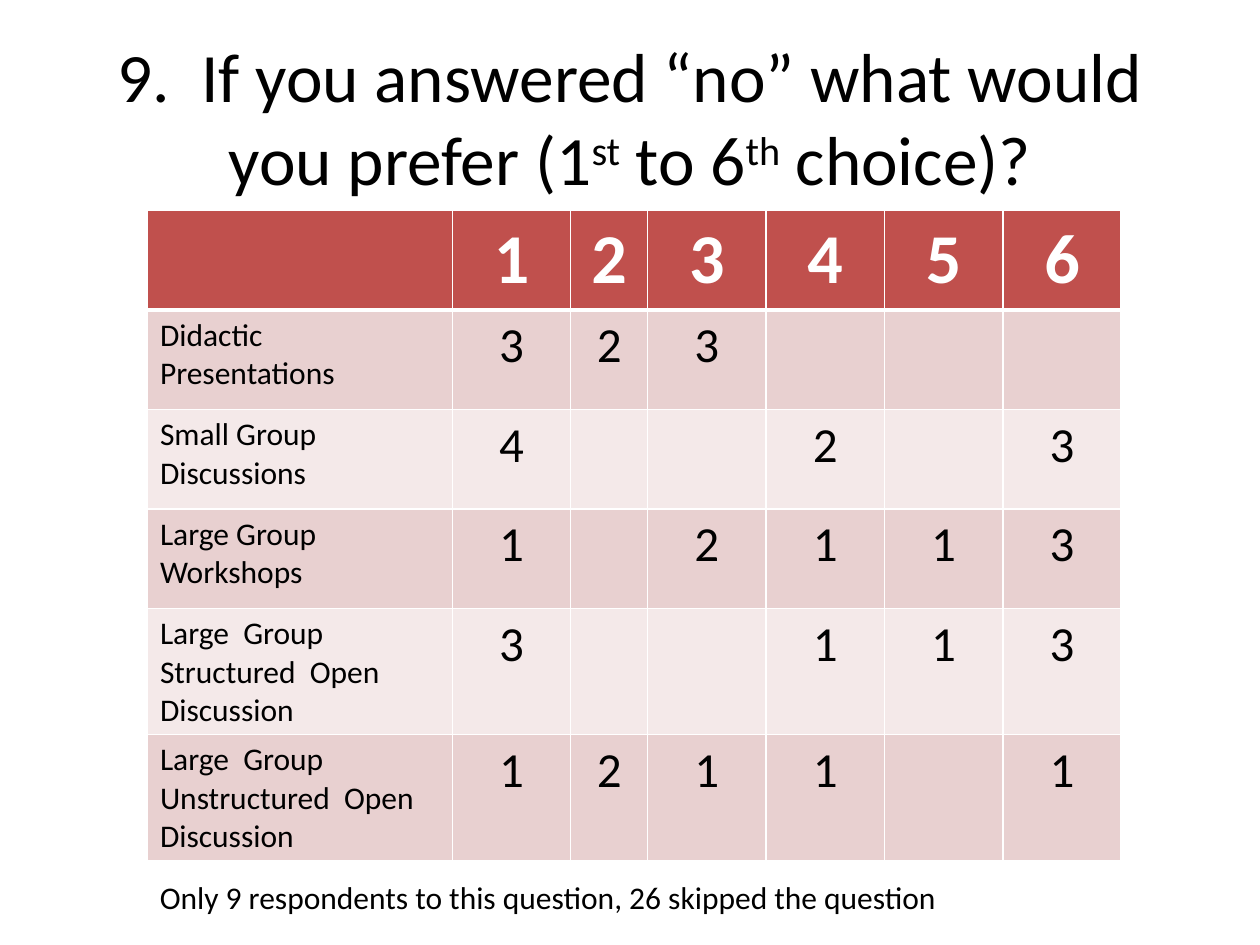
from lxml import etree
from pptx import Presentation
from pptx import util as u
from pptx.dml.color import RGBColor
from pptx.enum import text
from pptx.oxml import ns

# Content
TITLE = [("9.  If you answered “no” what would you prefer (1", False), ("st", True),
         (" to 6", False), ("th", True), (" choice)?", False)]
ROWS = [
    ("", 1, 2, 3, 4, 5, 6),
    ("Didactic\nPresentations", 3, 2, 3, "", "", ""),
    ("Small Group\nDiscussions", 4, "", "", 2, "", 3),
    ("Large Group\nWorkshops", 1, "", 2, 1, 1, 3),
    ("Large  Group Structured  Open\nDiscussion", 3, "", "", 1, 1, 3),
    ("Large  Group\nUnstructured  Open\nDiscussion", 1, 2, 1, 1, "", 1),
]
NOTE = "Only 9 respondents to this question, 26 skipped the question"

# Style and grid
FONT = "Calibri"
COLORS = {"header": "C0504D", "odd": "E8D0D0", "even": "F4E9E9",
          "white": "FFFFFF", "black": "000000"}
COLUMNS = [2.42, 0.94, 0.61] + [0.94] * 4
ROW_HEIGHT = 0.79
TABLE_LEFT, TABLE_TOP = 1.17, 1.67


def color(name):
    return RGBColor.from_string(COLORS[name])


def style(text_frame, size, name="black", bold=False, align=text.PP_ALIGN.LEFT):
    for paragraph in text_frame.paragraphs:
        paragraph.alignment = align
        for run in paragraph.runs:
            run.font.name, run.font.size, run.font.bold = FONT, u.Pt(size), bold
            run.font.color.rgb = color(name)


def add_text_box(slide, left, top, width, height):
    box = slide.shapes.add_textbox(*map(u.Inches, (left, top, width, height)))
    return box.text_frame


def add_borders(cell, bottom):
    properties = cell._tc.get_or_add_tcPr()
    for index, side in enumerate("LRTB"):
        line = etree.Element(ns.qn(f"a:ln{side}"), w=str(u.Pt(bottom if side == "B" else 1)))
        fill = etree.SubElement(line, ns.qn("a:solidFill"))
        etree.SubElement(fill, ns.qn("a:srgbClr"), val=COLORS["white"])
        properties.insert(index, line)


def add_title(slide):
    frame = add_text_box(slide, 0.5, 0.3, 9, 1.25)
    frame.word_wrap = True
    frame.vertical_anchor = text.MSO_ANCHOR.MIDDLE
    for words, raised in TITLE:
        run = frame.paragraphs[0].add_run()
        run.text = words
        if raised:
            run._r.get_or_add_rPr().set("baseline", "30000")
    style(frame, 39.6, align=text.PP_ALIGN.CENTER)


def add_choices(slide):
    area = (TABLE_LEFT, TABLE_TOP, sum(COLUMNS), ROW_HEIGHT * len(ROWS))
    table = slide.shapes.add_table(len(ROWS), len(COLUMNS), *map(u.Inches, area)).table
    for column, width in zip(table.columns, COLUMNS):
        column.width = u.Inches(width)
    for r, values in enumerate(ROWS):
        header = r == 0
        table.rows[r].height = u.Inches(ROW_HEIGHT)
        for c, value in enumerate(values):
            cell = table.cell(r, c)
            cell.text_frame.text = str(value)
            cell.fill.solid()
            cell.fill.fore_color.rgb = color("header" if header else "odd" if r % 2 else "even")
            add_borders(cell, 3 if header else 1)
            if c == 0:
                style(cell.text_frame, 18)
            else:
                style(cell.text_frame, 40 if header else 28, "white" if header else "black",
                      header, text.PP_ALIGN.CENTER)


def add_note(slide):
    frame = add_text_box(slide, TABLE_LEFT, 6.92, 6.44, 0.4)
    frame.word_wrap = False
    frame.auto_size = text.MSO_AUTO_SIZE.SHAPE_TO_FIT_TEXT
    frame.text = NOTE
    style(frame, 18)


def main():
    presentation = Presentation()
    presentation.slide_width, presentation.slide_height = u.Inches(10), u.Inches(7.5)
    slide = presentation.slides.add_slide(presentation.slide_layouts[6])
    add_title(slide)
    add_choices(slide)
    add_note(slide)
    presentation.save("out.pptx")


if __name__ == "__main__":
    main()
